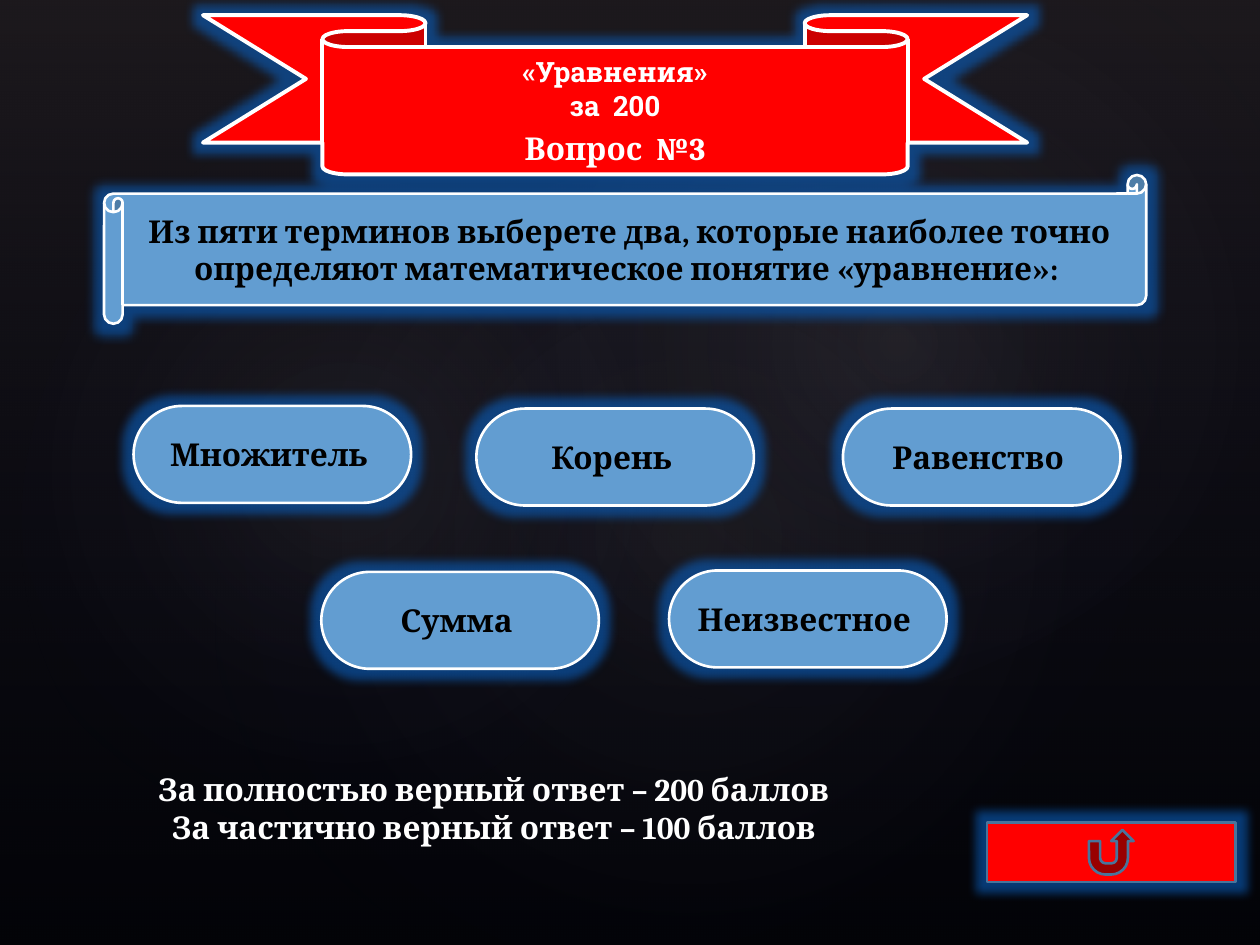
from lxml import etree
from pptx import Presentation
from pptx.dml.color import RGBColor
from pptx.enum.shapes import MSO_SHAPE
from pptx.enum.text import MSO_ANCHOR, PP_ALIGN
from pptx.oxml import parse_xml
from pptx.util import Pt

OVAL, RECT, PILL = MSO_SHAPE.OVAL, MSO_SHAPE.RECTANGLE, MSO_SHAPE.ROUNDED_RECTANGLE
RIBBON, SCROLL = MSO_SHAPE.DOWN_RIBBON, MSO_SHAPE.HORIZONTAL_SCROLL
BACK = MSO_SHAPE.ACTION_BUTTON_RETURN
MIDDLE, CENTER = MSO_ANCHOR.MIDDLE, PP_ALIGN.CENTER
NS = "http://schemas.openxmlformats.org/drawingml/2006/main"
INK = {"black": "000000", "white": "FFFFFF", "red": "FF0000", "blue": "629DD1",
       "edge": "49749B", "glow": "0A5FBE", "top": "504652", "navy": "242852",
       "haze": "C4BCC6"}

deck = Presentation()
deck.slide_width, deck.slide_height = Pt(720), Pt(540)
slide = deck.slides.add_slide(deck.slide_layouts[6])
slide.background.fill.solid()
slide.background.fill.fore_color.rgb = RGBColor.from_string(INK["black"])


def write(text, frame, size=18, font="Cambria", color="black", first=False, gap=0):
    para = frame.paragraphs[0] if first else frame.add_paragraph()
    para.alignment = CENTER
    para.space_before = Pt(gap)
    run = para.add_run()
    run.text = text
    run.font.size, run.font.name, run.font.bold = Pt(size), font, True
    run.font.color.rgb = RGBColor.from_string(INK[color])


def draw(kind, box, fill="blue", edge="white", width=1.5):
    shape = slide.shapes.add_shape(kind, *map(Pt, box))
    shape.shadow.inherit = False
    shape.fill.solid()
    shape.fill.fore_color.rgb = RGBColor.from_string(INK[fill])
    shape.line.color.rgb = RGBColor.from_string(INK[edge])
    shape.line.width = Pt(width)
    effects = shape._element.spPr.find(f"{{{NS}}}effectLst")
    glow = etree.SubElement(effects, f"{{{NS}}}glow", rad=str(Pt(11)))
    tint = etree.SubElement(glow, f"{{{NS}}}srgbClr", val=INK["glow"])
    etree.SubElement(tint, f"{{{NS}}}alpha", val="60000")
    shape.text_frame.word_wrap = True
    shape.text_frame.vertical_anchor = MIDDLE
    return shape


ROUND = ('<a:path path="circle"><a:fillToRect l="50000" t="50000" '
         'r="50000" b="50000"/></a:path>')
DOWN = '<a:lin ang="5400000" scaled="0"/>'
for kind, box, turn, start, end, way in (
    (RECT, (0, 0, 720, 540), 0, ("top", 36), ("navy", 10, 100), DOWN),
    (OVAL, (108, 82, 570, 449), 328.7, ("haze", 7), ("navy", 0, 58), ROUND),
    (OVAL, (-21.6, 92, 436, 353), 294.3, ("haze", 8), ("navy", 0, 58), ROUND),
    (OVAL, (257.8, 9.4, 510.5, 374.4), 328.7, ("haze", 8), ("navy", 0, 58), ROUND),
):
    light = slide.shapes.add_shape(kind, *map(Pt, box))
    light.shadow.inherit = False
    light.rotation = turn
    light.line.fill.background()
    stops = "".join(
        f'<a:gs pos="{pos * 1000}"><a:srgbClr val="{INK[name]}">'
        f'<a:alpha val="{alpha * 1000}"/></a:srgbClr></a:gs>'
        for name, alpha, pos in ((*start, 0), end))
    grad = parse_xml(f'<a:gradFill xmlns:a="{NS}" rotWithShape="1">'
                     f'<a:gsLst>{stops}</a:gsLst>{way}</a:gradFill>')
    light._element.spPr.find(f"{{{NS}}}prstGeom").addnext(grad)

banner = draw(RIBBON, (116, 8.7, 471, 91), fill="red", width=2.25)
banner.adjustments[0], banner.adjustments[1] = 0.2, 0.71
frame = banner.text_frame
write("«Уравнения»", frame, size=16, font="Roboto Slab", color="white", first=True)
write("за  200", frame, size=16, font="Roboto Slab", color="white")
write("Вопрос  №3", frame, color="white", gap=4)

draw(BACK, (564, 470, 142, 34), fill="red", edge="edge")

task = draw(SCROLL, (59.5, 100, 595.5, 85))
write("Из пяти терминов выберете два, которые наиболее точно "
      "определяют математическое понятие «уравнение»: ", task.text_frame, first=True)

for term, left, top in (
    ("Неизвестное ", 382.3, 326),
    ("Корень ", 272.2, 233.5),
    ("Равенство ", 481.7, 233.5),
    ("Сумма ", 183.6, 326.8),
    ("Множитель ", 76.3, 232),
):
    pill = draw(PILL, (left, top, 158.6, 55.4))
    pill.adjustments[0] = 0.5
    write(term, pill.text_frame, first=True)

score = slide.shapes.add_textbox(Pt(58.3), Pt(436.3), Pt(448), Pt(51)).text_frame
score.word_wrap = True
write("За полностью верный ответ – 200 баллов", score, color="white", first=True)
write("За частично верный ответ – 100 баллов", score, color="white")

deck.save("out.pptx")
